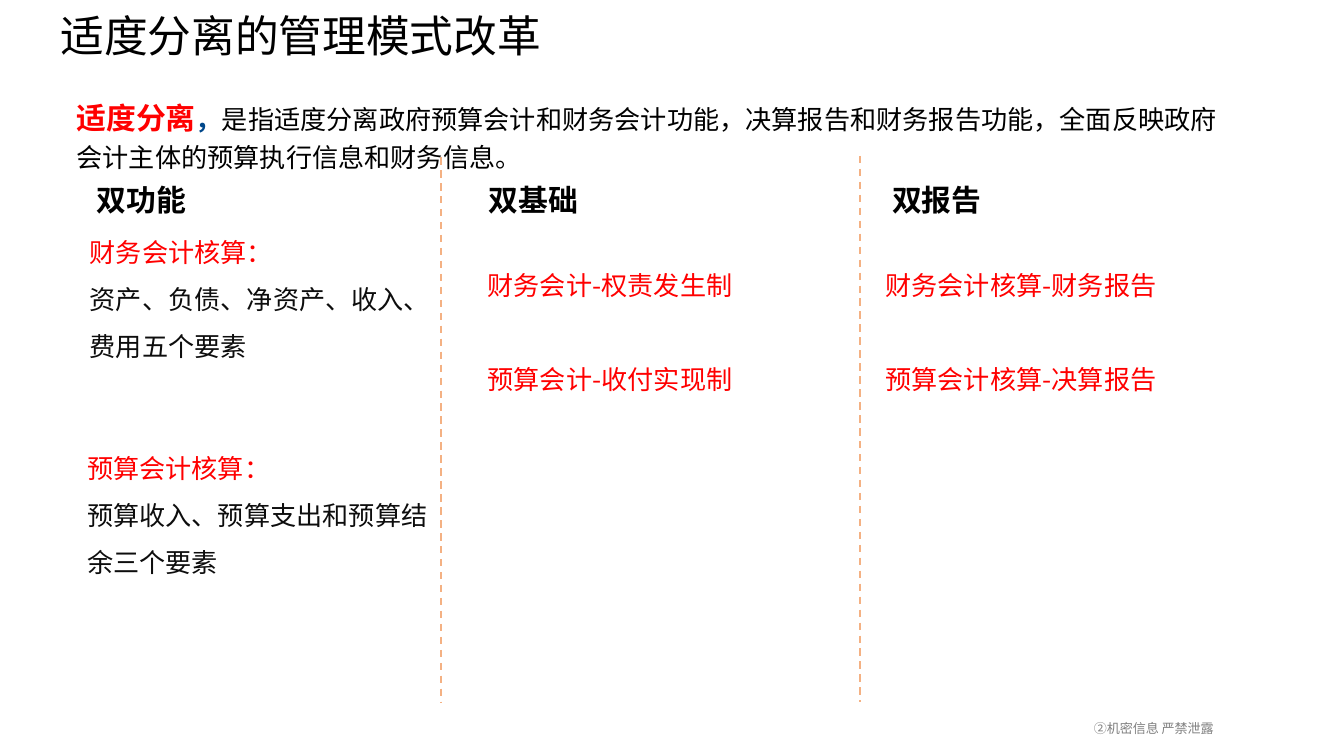
"""Builds the slide on moderate separation in government accounting."""
from lxml.etree import SubElement
from pptx import Presentation
from pptx.dml.color import RGBColor
from pptx.enum.dml import MSO_LINE_DASH_STYLE as Dash
from pptx.enum.shapes import MSO_CONNECTOR as Connector
from pptx.enum.text import MSO_ANCHOR as Anchor, MSO_AUTO_SIZE as AutoSize, PP_ALIGN as Align
from pptx.oxml.ns import qn
from pptx.util import Inches, Pt

COLORS = {"red": "FF0000", "black": "000000", "body": "0D0D0D",
          "blue": "00478A", "gray": "7F7F7F", "divider": "F4B183"}
TITLE_ONLY = 5


class SlideBuilder:
    """Holds the style and the current slide."""

    def __init__(self, presentation, font_name):
        """Adds a title-only slide."""
        self.slide = presentation.slides.add_slide(presentation.slide_layouts[TITLE_ONLY])
        self.font_name = font_name

    def style(self, font, size, color, bold=False):
        """Sets Latin and East Asian fonts alike."""
        font.size, font.bold, font.name = Pt(size), bold, self.font_name
        font.color.rgb = RGBColor.from_string(COLORS[color])
        SubElement(font._rPr, qn("a:ea"), typeface=self.font_name)

    def title(self, text, left, top, width, height, size):
        """Moves and formats the title placeholder."""
        title = self.slide.shapes.title
        title.left, title.top = Inches(left), Inches(top)
        title.width, title.height = Inches(width), Inches(height)
        frame = title.text_frame
        frame.auto_size, frame.vertical_anchor = AutoSize.NONE, Anchor.MIDDLE
        paragraph = frame.paragraphs[0]
        paragraph.text, paragraph.alignment = text, Align.LEFT
        paragraph.line_spacing = 0.9
        self.style(paragraph.font, size, "black")

    def frame(self, left, top, width, height, insets=(0.1, 0.05), anchor=Anchor.TOP):
        """Adds an empty wrapping text box and returns its frame."""
        box = self.slide.shapes.add_textbox(Inches(left), Inches(top), Inches(width), Inches(height))
        frame = box.text_frame
        frame.word_wrap, frame.vertical_anchor = True, anchor
        frame.margin_left = frame.margin_right = Inches(insets[0])
        frame.margin_top = frame.margin_bottom = Inches(insets[1])
        return frame

    def heading(self, text, left):
        """Adds a bold column heading."""
        paragraph = self.frame(left, 1.3, 2.4, 0.37).paragraphs[0]
        paragraph.text = text
        self.style(paragraph.font, 16, "black", True)

    def body(self, lines, left, top, height, gap=0):
        """Adds widely spaced lines given as text and colour."""
        frame = self.frame(left, top, 2.77, height)
        for index, (text, color) in enumerate(lines):
            paragraph = frame.add_paragraph() if index else frame.paragraphs[0]
            paragraph.text, paragraph.line_spacing = text, 1.5
            paragraph.space_before = Pt(gap if index else 0)
            self.style(paragraph.font, 14, color)

    def summary(self, runs, left, top, width, height):
        """Adds a paragraph of differently styled runs."""
        frame = self.frame(left, top, width, height, (0, 0), Anchor.MIDDLE)
        paragraph = frame.paragraphs[0]
        paragraph.line_spacing = 1.2
        for text, *look in runs:
            run = paragraph.add_run()
            run.text = text
            self.style(run.font, *look)

    def footer(self, text, left, top, width, height):
        """Adds the small right-aligned notice."""
        paragraph = self.frame(left, top, width, height, (0.06, 0.01), Anchor.MIDDLE).paragraphs[0]
        paragraph.text, paragraph.alignment = text, Align.RIGHT
        paragraph.line_spacing = Pt(10.5)
        self.style(paragraph.font, 7, "gray")

    def divider(self, x, top, length):
        """Adds a dashed vertical line."""
        line = self.slide.shapes.add_connector(
            Connector.STRAIGHT, Inches(x), Inches(top), Inches(x), Inches(top + length))
        line.line.color.rgb = RGBColor.from_string(COLORS["divider"])
        line.line.width, line.line.dash_style = Pt(1), Dash.DASH
        SubElement(line._element.spPr, qn("a:effectLst"))


def main():
    """Builds and saves the presentation."""
    presentation = Presentation()
    presentation.slide_width, presentation.slide_height = Inches(10), Inches(10 * 9 / 16)
    builder = SlideBuilder(presentation, "Noto Sans CJK SC")
    builder.footer("②机密信息 严禁泄露", 7.32, 5.27, 1.77, 0.27)
    builder.title("适度分离的管理模式改革", 0.35, 0.02, 7.8, 0.53, 23.4)
    for x, top in ((3.28, 1.17), (6.4, 1.16)):
        builder.divider(x, top, 4.06)
    for name, elements, left, top in (
            ("财务会计核算：", "资产、负债、净资产、收入、费用五个要素", 0.57, 1.59),
            ("预算会计核算：", "预算收入、预算支出和预算结余三个要素", 0.55, 3.2)):
        builder.body([(name, "red"), (elements, "body")], left, top, 1.16)
    for lines, left, height in (
            (("财务会计-权责发生制", "预算会计-收付实现制"), 3.53, 1.59),
            (("财务会计核算-财务报告", "预算会计核算-决算报告"), 6.49, 1.16)):
        builder.body([(line, "red") for line in lines], left, 1.84, height, gap=25.2)
    for text, left in (("双功能", 0.62), ("双基础", 3.54), ("双报告", 6.54)):
        builder.heading(text, left)
    builder.summary([
        ("适度分离", 16, "red", True),
        ("，", 14, "blue", True),
        ("是指适度分离政府预算会计和财务会计功能，决算报告和财务报告功能，"
         "全面反映政府会计主体的预算执行信息和财务信息。", 14, "black"),
    ], 0.57, 0.68, 8.68, 0.61)
    presentation.save("out.pptx")


if __name__ == "__main__":
    main()
